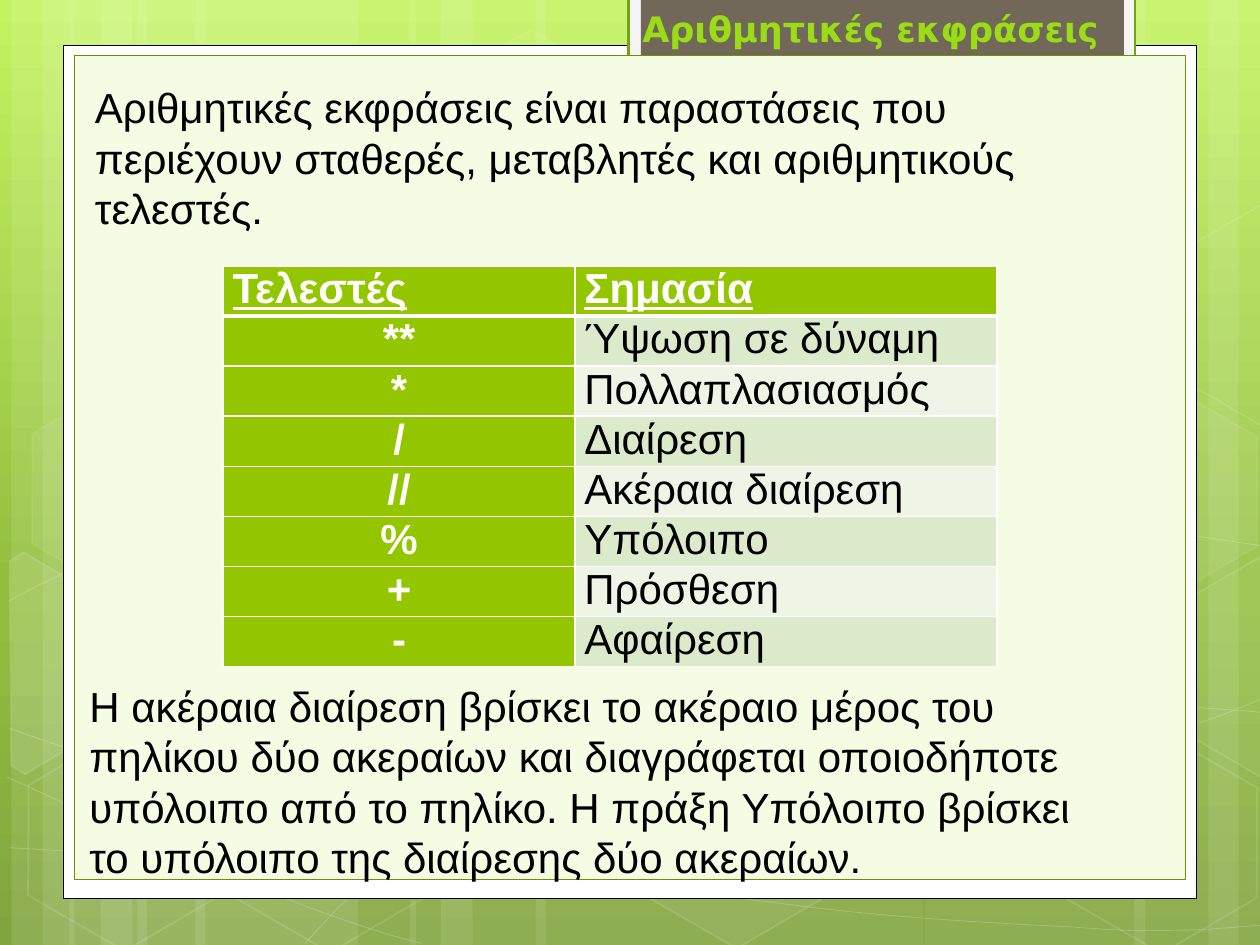
from copy import deepcopy
from math import cos, radians, sin
from typing import NamedTuple, Optional

from lxml.etree import SubElement
from pptx import Presentation
from pptx.dml.color import RGBColor
from pptx.enum.shapes import MSO_SHAPE as Preset
from pptx.enum.text import MSO_ANCHOR as Anchor, MSO_AUTO_SIZE as AutoSize, PP_ALIGN as Align
from pptx.oxml.ns import qn
from pptx.util import Cm, Pt

SLIDE_WIDTH, SLIDE_HEIGHT = 25.4, 19.05
WHITE, BLACK, GREEN = "FFFFFF", "000000", "94C600"
BANDS = ("DCEACC", "EEF5E7")
TILT = 30


class Style(NamedTuple):
    """Opacities are percentages; a fill or line of None is not drawn."""
    fill: Optional[str] = None
    line: Optional[str] = None
    width: float = 1
    fill_opacity: int = 100
    line_opacity: int = 100


class Box(NamedTuple):
    left: float
    top: float
    width: float
    height: float
    style: Style = Style()


class Operator(NamedTuple):
    symbol: str
    meaning: str


def glass(fill_opacity: int, line_opacity: int = 0, width: float = 1) -> Style:
    return Style(WHITE if fill_opacity else None, WHITE if line_opacity else None,
                 width, fill_opacity, line_opacity)


STRIPS = [(2.77, 4.45), (0.23, 1.27), (0.86, 2.11), (3.94, 4.45), (1.4, 1.27), (2.03, 2.11),
          (18.64, 4.45), (24.36, 1.27), (22.86, 2.11), (10.8, 7.82), (8.26, 1.27), (8.89, 2.11)]

# Each curve is a start point followed by three points per cubic segment.
CURVES = [
    [(0.18, 17.09), (1.55, 17.17), (2.92, 17.25), (4.83, 17.22), (6.73, 17.2), (9.09, 17.15),
     (11.63, 16.89), (14.17, 16.64), (17.78, 16.15), (20.12, 15.67), (22.43, 15.19),
     (24.82, 14.43), (25.58, 14)],
    [(0.18, 12.12), (0.91, 11.71), (1.65, 11.33), (3.07, 10.95), (4.52, 10.57), (6.58, 10.01),
     (8.81, 9.83), (11.07, 9.65), (13.82, 9.63), (16.61, 9.83), (19.41, 10.03),
     (24.05, 10.82), (25.58, 11.02)],
    [(0.15, 15.67), (3.23, 17.07), (6.27, 18.47), (8.51, 19.02)],
    [(0.18, 14.68), (0.97, 14.96), (1.78, 15.24), (3.25, 15.65), (4.72, 16.03), (6.93, 16.66),
     (9.07, 17.09), (11.18, 17.53), (13.84, 17.98), (15.95, 18.24), (18.06, 18.52),
     (20.32, 18.62), (21.67, 18.69), (23.01, 18.8), (23.34, 18.75), (24, 18.75),
     (24.66, 18.72), (25.12, 18.67), (25.58, 18.64)],
    [(6.15, 19.02), (6.6, 18.52), (7.06, 18.01), (7.67, 17.55), (8.28, 17.07), (9.14, 16.59),
     (9.86, 16.23), (10.57, 15.88), (11, 15.72), (11.91, 15.47), (12.85, 15.21),
     (14.55, 14.86), (15.44, 14.68), (16.36, 14.5), (16.48, 14.5), (17.27, 14.45),
     (18.06, 14.38), (19.3, 14.3), (20.17, 14.27), (21.06, 14.25), (22.5, 14.27),
     (22.5, 14.27), (23.07, 14.27), (23.64, 14.27), (24.21, 14.27), (24.66, 14.3),
     (25.1, 14.33), (25.32, 14.35), (25.55, 14.38), (25.48, 14.35), (25.55, 14.38)],
]

HEXAGONS = [(8.48, 0.91, glass(4, 8)), (12.62, 14.96, glass(6, 12)), (0.28, 15.01, glass(0, 12)),
            (0.36, 7.92, glass(7, 8)), (4.42, 15.04, glass(0, 12)), (19.13, 11.51, glass(10, 12)),
            (21.18, 15.06, glass(0, 12)), (21.18, 7.98, glass(7, 8))]
LEFT_EDGE = [(0.2, 11.3), (0.48, 11.13), (2.44, 12.27), (2.41, 14.48), (0.51, 15.6), (0.23, 15.42)]
RIGHT_EDGE = [(23.52, 12.32), (25.45, 11.2), (25.63, 11.33), (25.63, 15.57), (25.45, 15.67),
              (23.52, 14.55)]
# Corners, centre of the tilted frame, style.
CUT_HEXAGONS = [(LEFT_EDGE, (0.91, 13.61), glass(10, 12)),
                (RIGHT_EDGE, (25.02, 13.21), glass(4, 12)),
                ([(x, y - 7.09) for x, y in RIGHT_EDGE], (25.02, 6.12), glass(0, 12))]

PANELS = [Box(1.27, 0.91, 22.86, 17.2, Style(WHITE, BLACK, 0.5)),
          Box(12.67, -0.05, 10.22, 1.96, Style("F5F5F5", "74A510", 1.25)),
          Box(12.92, -0.05, 9.74, 1.73, Style("71685A")),
          Box(1.5, 1.12, 22.4, 16.61, Style("F4FCE4", "6D9200", 0.75))]

OPERATORS = [Operator("**", "Ύψωση σε δύναμη"), Operator("*", "Πολλαπλασιασμός"),
             Operator("/", "Διαίρεση"), Operator("//", "Ακέραια διαίρεση"),
             Operator("%", "Υπόλοιπο"), Operator("+", "Πρόσθεση"), Operator("-", "Αφαίρεση")]

TITLE = "Αριθμητικές εκφράσεις "
INTRO = ("Αριθμητικές εκφράσεις είναι παραστάσεις που περιέχουν σταθερές, "
         "μεταβλητές και αριθμητικούς τελεστές.")
NOTE = ("Η ακέραια διαίρεση βρίσκει το ακέραιο μέρος του πηλίκου δύο ακεραίων και διαγράφεται "
        "οποιοδήποτε υπόλοιπο από το πηλίκο. Η πράξη Υπόλοιπο βρίσκει το υπόλοιπο της "
        "διαίρεσης δύο ακεραίων.")


def rgb(value: str) -> RGBColor:
    return RGBColor.from_string(value)


def set_opacity(parent, percent: int) -> None:
    if percent < 100:
        color = parent.find(f"{qn('a:solidFill')}/{qn('a:srgbClr')}")
        SubElement(color, qn("a:alpha"), val=str(percent * 1000))


def apply_style(shape, style: Style) -> None:
    shape.shadow.inherit = False
    properties = shape.element.spPr
    if style.fill:
        shape.fill.solid()
        shape.fill.fore_color.rgb = rgb(style.fill)
        set_opacity(properties, style.fill_opacity)
    else:
        shape.fill.background()
    if style.line:
        shape.line.color.rgb = rgb(style.line)
        shape.line.width = Pt(style.width)
        set_opacity(properties.find(qn("a:ln")), style.line_opacity)
    else:
        shape.line.fill.background()


def draw_box(slide, box: Box, preset=Preset.RECTANGLE):
    shape = slide.shapes.add_shape(preset, *(Cm(length) for length in box[:4]))
    apply_style(shape, box.style)
    return shape


def draw_outline(slide, points: list, style: Style, close: bool = True):
    corners = [(Cm(x), Cm(y)) for x, y in points]
    builder = slide.shapes.build_freeform(*corners[0])
    builder.add_line_segments(corners[1:], close=close)
    shape = builder.convert_to_shape()
    apply_style(shape, style)
    return shape


def draw_curve(slide, points: list, style: Style) -> None:
    """Draw an open outline, then merge every three line segments into a cubic one."""
    shape = draw_outline(slide, points, style, close=False)
    lines = list(shape.element.iter(qn("a:lnTo")))
    outline = lines[0].getparent()
    for start in range(0, len(lines), 3):
        cubic = SubElement(outline, qn("a:cubicBezTo"))
        for line in lines[start:start + 3]:
            cubic.append(line[0])
            outline.remove(line)


def untilt(point: tuple, centre: tuple) -> tuple:
    """Turn a point back by the tilt, so that the shape's rotation restores it."""
    x, y = point[0] - centre[0], point[1] - centre[1]
    c, s = cos(radians(TILT)), sin(radians(TILT))
    return centre[0] + x * c + y * s, centre[1] - x * s + y * c


def write(frame, text: str, *, size=24, font="Arial", color=BLACK, bold=False,
          underline=False, align=Align.LEFT, after=0, indent=0) -> None:
    paragraph = frame.paragraphs[0]
    paragraph.alignment = align
    paragraph.space_before, paragraph.space_after = Pt(0), Pt(after)
    properties = paragraph._p.get_or_add_pPr()
    properties.set("marL", "0")
    properties.set("indent", str(Cm(indent)))
    run = paragraph.add_run()
    run.text = text
    run.font.size, run.font.name = Pt(size), font
    run.font.bold, run.font.underline = bold, underline
    run.font.color.rgb = rgb(color)


def fill_placeholder(slide, index: int, box: Box, text: str, wrap=True, **text_format) -> None:
    shape = slide.placeholders[index]
    shape.left, shape.top, shape.width, shape.height = (Cm(length) for length in box[:4])
    frame = shape.text_frame
    frame.word_wrap, frame.auto_size, frame.vertical_anchor = wrap, AutoSize.NONE, Anchor.TOP
    write(frame, text, **text_format)
    SubElement(frame.paragraphs[0]._p.get_or_add_pPr(), qn("a:buNone"))
    slide.shapes._spTree.append(shape.element)  # bring to front


def draw_cell(cell, text: str, fill: str, top=1, bottom=1, **text_format) -> None:
    cell.margin_left = cell.margin_right = Cm(0.19)
    cell.margin_top = cell.margin_bottom = 0
    write(cell.text_frame, text, after=6, **text_format)
    properties = cell._tc.get_or_add_tcPr()
    for side, width in (("L", 1), ("R", 1), ("T", top), ("B", bottom)):
        border = SubElement(properties, qn(f"a:ln{side}"), w=str(Pt(width)))
        SubElement(SubElement(border, qn("a:solidFill")), qn("a:srgbClr"), val=WHITE)
    cell.fill.solid()
    cell.fill.fore_color.rgb = rgb(fill)


def draw_operator_table(slide) -> None:
    rows, row_height, widths = len(OPERATORS) + 1, 1.01, (7.09, 8.51)
    table = slide.shapes.add_table(rows, 2, Cm(4.5), Cm(5.36), Cm(sum(widths)),
                                   Cm(rows * row_height)).table
    for column, width in zip(table.columns, widths):
        column.width = Cm(width)
    for column, heading in enumerate(("Τελεστές", "Σημασία")):
        draw_cell(table.cell(0, column), heading, GREEN, bottom=3, color=WHITE, bold=True,
                  underline=True, align=Align.JUSTIFY)
    for row, operator in enumerate(OPERATORS, start=1):
        top = 3 if row == 1 else 1
        draw_cell(table.cell(row, 0), operator.symbol, GREEN, top, color=WHITE, bold=True,
                  align=Align.CENTER, indent=-0.32)
        draw_cell(table.cell(row, 1), operator.meaning, BANDS[(row - 1) % 2], top,
                  align=Align.JUSTIFY)


def draw_background(slide) -> None:
    fill = slide.background.fill
    fill.gradient()
    fill.gradient_angle = 270
    stop_list = next(slide.element.iter(qn("a:gsLst")))
    stop_list.append(deepcopy(stop_list[0]))
    stops = ((0, "C3F35F"), (0.62, "93BF3F"), (1, "81A53E"))
    for stop, (position, color) in zip(fill.gradient_stops, stops):
        stop.position, stop.color.rgb = position, rgb(color)
    for left, width in STRIPS:
        draw_box(slide, Box(left, 0, width, SLIDE_HEIGHT, glass(10)))
    for curve in CURVES:
        draw_curve(slide, curve, glass(0, 20, 0.5))
    for left, top, style in HEXAGONS:
        hexagon = draw_box(slide, Box(left, top, 4.45, 3.86, style), Preset.HEXAGON)
        hexagon.adjustments[0] = 0.285
        hexagon.rotation = TILT
    for points, centre, style in CUT_HEXAGONS:
        draw_outline(slide, [untilt(point, centre) for point in points], style).rotation = TILT


def main() -> None:
    presentation = Presentation()
    presentation.slide_width, presentation.slide_height = Cm(SLIDE_WIDTH), Cm(SLIDE_HEIGHT)
    slide = presentation.slides.add_slide(presentation.slide_layouts.get_by_name("Two Content"))
    draw_background(slide)
    for panel in PANELS:
        draw_box(slide, panel)
    fill_placeholder(slide, 2, Box(1.55, 13.59, 21.21, 4.37), NOTE)
    draw_operator_table(slide)
    fill_placeholder(slide, 1, Box(1.66, 1.52, 21.21, 3.33), INTRO)
    fill_placeholder(slide, 0, Box(12.62, 0.03, 9.86, 1.12), TITLE, wrap=False, size=20,
                     font="DejaVu Sans", color="9ADD15", bold=True, align=Align.CENTER)
    presentation.save("out.pptx")


if __name__ == "__main__":
    main()
